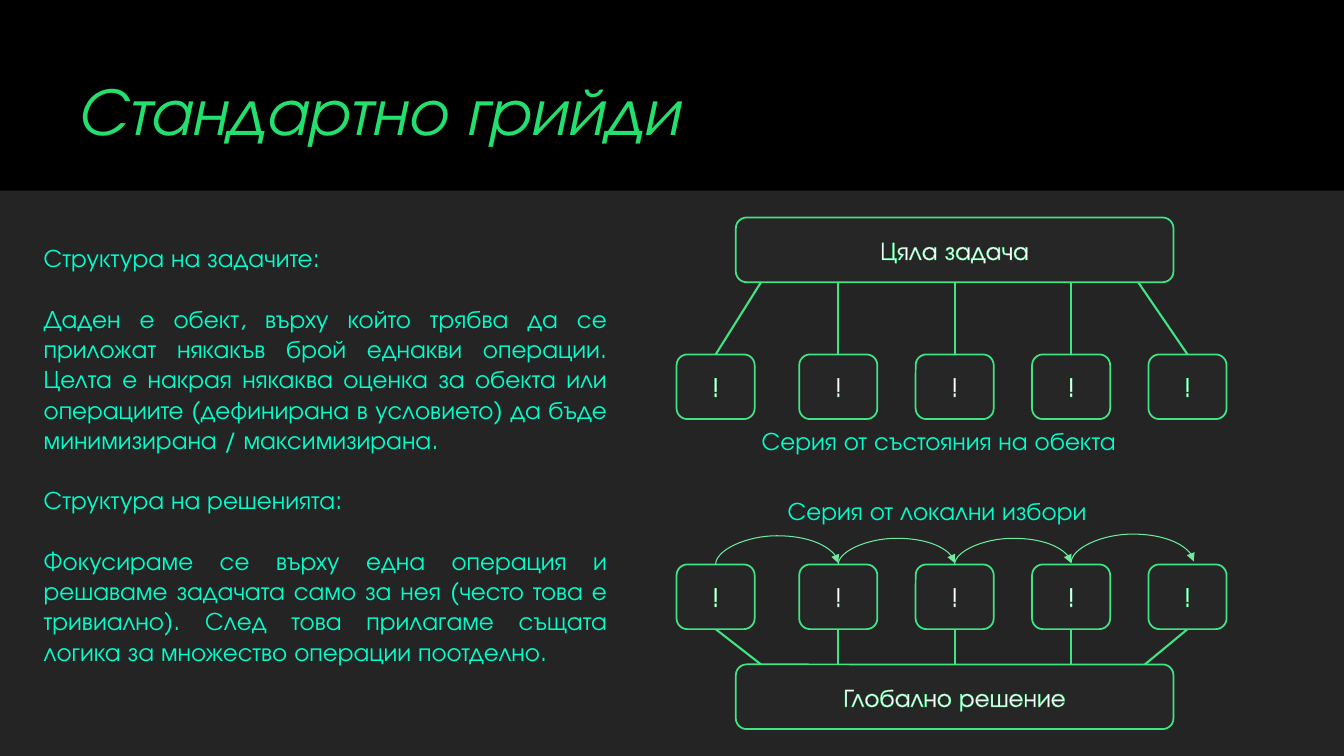
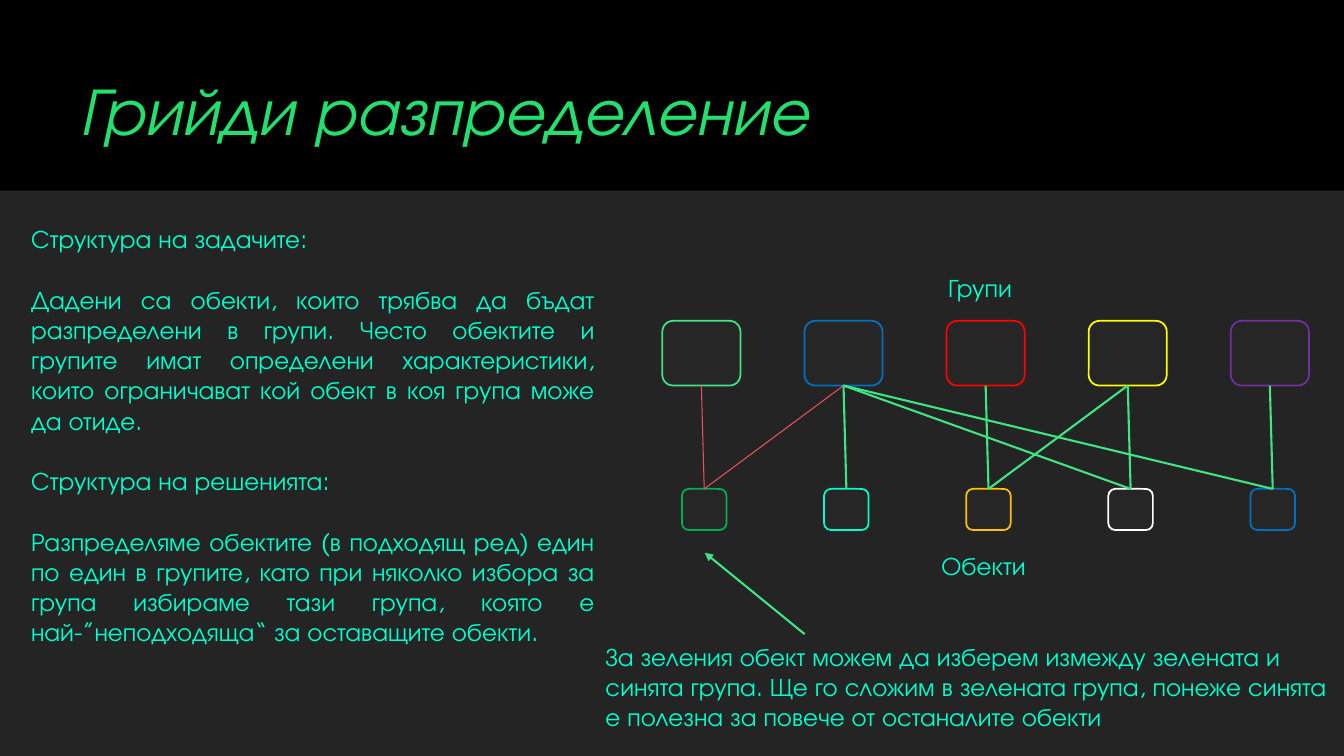
from dataclasses import dataclass
from typing import Optional
from lxml.etree import SubElement as Sub
from pptx import Presentation
from pptx.dml.color import RGBColor as Rgb
from pptx.enum.shapes import MSO_CONNECTOR as Con, MSO_SHAPE as Form
from pptx.enum.text import MSO_ANCHOR as Anchor, MSO_AUTO_SIZE as Auto, PP_ALIGN as Align
from pptx.oxml.ns import qn
from pptx.util import Inches, Pt

COLS, ROWS = 80, 45
WIDE, HIGH = Inches(13.333), Inches(7.5)
FONT = "TeX Gyre Adventor"
HUES = {
    "black": "000000", "panel": "262626", "text": "00FFCC", "white": "FFFFFF",
    "line": "40E482", "arc": "6FEBA0", "head": "23E06E", "fade": "44FFF5",
    "warn": "ED515C", "red": "FF0000", "blue": "0070C0", "yellow": "FFFF00",
    "purple": "7030A0", "gold": "FFC000", "green": "00B050",
}
CELL = (4.65, 3.85)
ITEM = (2.65, 2.45)
LABEL = 2.4
BAND = 11.35


@dataclass
class Box:
    x: float
    y: float
    w: float
    h: float
    hue: str = "line"
    text: str = ""


@dataclass
class Link:
    x: float
    y: float
    to_x: float
    to_y: float
    hue: str = "line"
    width: float = 1.5
    arrow: bool = False


@dataclass
class Arc:
    x: float
    y: float
    span: float
    rise: float


def col(n: float) -> int:
    return round(WIDE * n / COLS)


def row(n: float) -> int:
    return round(HIGH * n / ROWS)


def rgb(name: str) -> Rgb:
    return Rgb.from_string(HUES[name])


def area(box: Box) -> tuple[int, int, int, int]:
    return col(box.x), row(box.y), col(box.w), row(box.h)


def write(frame, *texts: str, hue: str = "text", size: float = 18, align=Align.LEFT,
          anchor=Anchor.TOP, wrap: bool = True, gap: float = 0, fade: Optional[str] = None,
          italic: bool = False, edge: Optional[str] = None) -> None:
    frame.word_wrap = wrap
    frame.auto_size = Auto.NONE if wrap else Auto.SHAPE_TO_FIT_TEXT
    frame.vertical_anchor = anchor
    for n, text in enumerate(texts):
        para = frame.paragraphs[0] if n == 0 else frame.add_paragraph()
        prop = para._p.get_or_add_pPr()
        prop.set("marL", "0")
        prop.set("indent", "0")
        Sub(prop, qn("a:buNone"))
        para.alignment = align
        para.space_before = Pt(gap if n else 0)
        run = para.add_run()
        run.text = text
        font = run.font
        font.name, font.size, font.italic = FONT, Pt(size), italic
        if fade:
            font.fill.gradient()
            font.fill.gradient_angle = 270
            for stop, name in zip(font.fill.gradient_stops, (hue, fade)):
                stop.color.rgb = rgb(name)
        else:
            font.color.rgb = rgb(hue)
        if edge:
            line = Sub(run._r.get_or_add_rPr(), qn("a:ln"), w=str(Pt(0.75)))
            Sub(Sub(line, qn("a:solidFill")), qn("a:srgbClr"), val=HUES[edge])
            run._r.rPr.insert(0, line)


def block(slide, box: Box) -> None:
    shape = slide.shapes.add_shape(Form.ROUNDED_RECTANGLE, *area(box))
    shape.shadow.inherit = False
    shape.fill.solid()
    shape.fill.fore_color.rgb = rgb("panel")
    shape.line.color.rgb = rgb(box.hue)
    shape.line.width = Pt(1.25)
    if box.text:
        write(shape.text_frame, box.text, hue="white", align=Align.CENTER,
              anchor=Anchor.MIDDLE, edge="line")


def label(slide, box: Box, wrap: bool = False) -> None:
    write(slide.shapes.add_textbox(*area(box)).text_frame, box.text, wrap=wrap)


def style(wire, hue: str, width: float, arrow: bool) -> None:
    wire.line.color.rgb = rgb(hue)
    wire.line.width = Pt(width)
    if arrow:
        Sub(wire.line._get_or_add_ln(), qn("a:tailEnd"), type="triangle")
    Sub(wire.element.spPr, qn("a:effectLst"))


def join(slide, link: Link) -> None:
    wire = slide.shapes.add_connector(
        Con.STRAIGHT, col(link.x), row(link.y), col(link.to_x), row(link.to_y))
    style(wire, link.hue, link.width, link.arrow)


def bend(slide, arc: Arc) -> None:
    thin = 0.08
    left, top = arc.x + (arc.span - thin) / 2, arc.y - (arc.span + thin) / 2
    wire = slide.shapes.add_connector(
        Con.CURVE, col(left), row(top), col(left + thin), row(top + arc.span))
    frame = wire.element.spPr.find(qn("a:xfrm"))
    for key, value in (("rot", "5400000"), ("flipH", "1"), ("flipV", "1")):
        frame.set(key, value)
    guides = wire.element.spPr.find(qn("a:prstGeom")).find(qn("a:avLst"))
    Sub(guides, qn("a:gd"), name="adj1", fmla=f"val {round(arc.rise / thin * 100000)}")
    style(wire, "arc", 0.75, True)


def place(shape, box: Box) -> None:
    shape.left, shape.top, shape.width, shape.height = area(box)


def start(deck, title: str, width: float, body: Box, texts: list[str]):
    slide = deck.slides.add_slide(deck.slide_layouts[1])
    head, main = slide.placeholders
    place(head, Box(1.75, 2.8, width, 6.35))
    write(head.text_frame, title, hue="head", fade="fade", size=48, italic=True,
          align=Align.CENTER, anchor=Anchor.BOTTOM)
    place(main, body)
    write(main.text_frame, *texts, align=Align.JUSTIFY, gap=21.6)
    return slide


def theme(deck) -> None:
    back = deck.slide_master.background.fill
    back.solid()
    back.fore_color.rgb = rgb("black")
    slide = deck.slides[0]
    band = slide.shapes.add_shape(Form.RECTANGLE, *area(Box(0, BAND, COLS, ROWS - BAND)))
    band.shadow.inherit = False
    band.fill.solid()
    band.fill.fore_color.rgb = rgb("panel")
    band.line.fill.background()
    Sub(band.element.spPr.find(".//" + qn("a:srgbClr")), qn("a:alpha"), val="95000")
    slide.slide_layout.shapes.element.append(band.element)


def basic(deck) -> None:
    slide = start(deck, "Стандартно грийди", 41.5, Box(2, 14.15, 34.75, 27.85), [
        "Структура на задачите:",
        "Даден е обект, върху който трябва да се приложат някакъв брой еднакви операции. "
        "Целта е накрая някаква оценка за обекта или операциите (дефинирана в условието) "
        "да бъде минимизирана / максимизирана.",
        "Структура на решенията:",
        "Фокусираме се върху една операция и решаваме задачата само за нея (често това е "
        "тривиално). След това прилагаме същата логика за множество операции поотделно.",
    ])
    pitch = 6.93
    mids = [42.6] + [49.9 + pitch * n for n in range(4)]
    wide, tall = CELL
    first, last, upper, lower = 12.95, 39.55, 21.1, 33.6
    for y, text in ((first, "Цяла задача"), (last, "Глобално решение")):
        block(slide, Box(43.8, y, 26.05, tall, text=text))
    for mid, top, base in zip(mids, [45.3, *mids[1:4], 67.75], [45.3, *mids[1:4], 68.15]):
        join(slide, Link(top, first + tall, mid, upper))
        join(slide, Link(mid, lower + tall, base, last))
        for y in (upper, lower):
            block(slide, Box(mid - wide / 2, y, wide, tall, text="!"))
    for arc in (Arc(mids[0], lower, 7.3, 1.7), Arc(mids[1], lower, pitch, 1.55),
                Arc(mids[2], lower, pitch, 1.55), Arc(mids[3], lower - 0.1, 7.3, 1.7)):
        bend(slide, arc)
    label(slide, Box(44.75, 25, 24.1, LABEL, text="Серия от състояния на обекта"))
    label(slide, Box(46.3, 29.2, 20.75, LABEL, text="Серия от локални избори"))


def groups(deck) -> None:
    slide = start(deck, "Грийди разпределение", 49.4, Box(1.25, 13, 34.75, 27.85), [
        "Структура на задачите:",
        "Дадени са обекти, които трябва да бъдат разпределени в групи. Често обектите и "
        "групите имат определени характеристики, които ограничават кой обект в коя група "
        "може да отиде.",
        "Структура на решенията:",
        "Разпределяме обектите (в подходящ ред) един по един в групите, като при няколко "
        "избора за група избираме тази група, която е най-”неподходяща“ за оставащите обекти.",
    ])
    pitch, upper, lower = 8.46, 19.1, 29.1
    tops = [41.75 + pitch * n for n in range(5)]
    ends = [41.92 + pitch * n for n in range(5)]
    for mids, y, (wide, tall), hues in (
            (tops, upper, CELL, ("line", "blue", "red", "yellow", "purple")),
            (ends, lower, ITEM, ("green", "text", "gold", "white", "blue"))):
        for mid, hue in zip(mids, hues):
            block(slide, Box(mid - wide / 2, y, wide, tall, hue))
    for top, end in ((0, 0), (1, 0), (1, 1), (3, 2), (3, 3), (2, 2), (1, 4), (4, 4), (1, 3)):
        hue, width = ("line", 1.5) if end else ("warn", 0.75)
        join(slide, Link(tops[top], upper + CELL[1], ends[end], lower, hue, width))
    join(slide, Link(47.9, 37.75, 41.95, 32.9, arrow=True))
    label(slide, Box(55.85, 15.9, 5.6, LABEL, text="Групи"))
    label(slide, Box(55.45, 32.45, 6.8, LABEL, text="Обекти"))
    label(slide, Box(35.45, 37.85, 45.25, 6.05, text=(
        "За зеления обект можем да изберем измежду зелената и синята група. Ще го сложим "
        "в зелената група, понеже синята е полезна за повече от останалите обекти")), wrap=True)


def main() -> None:
    deck = Presentation()
    deck.slide_width, deck.slide_height = WIDE, HIGH
    basic(deck)
    groups(deck)
    theme(deck)
    deck.save("out.pptx")


if __name__ == "__main__":
    main()
